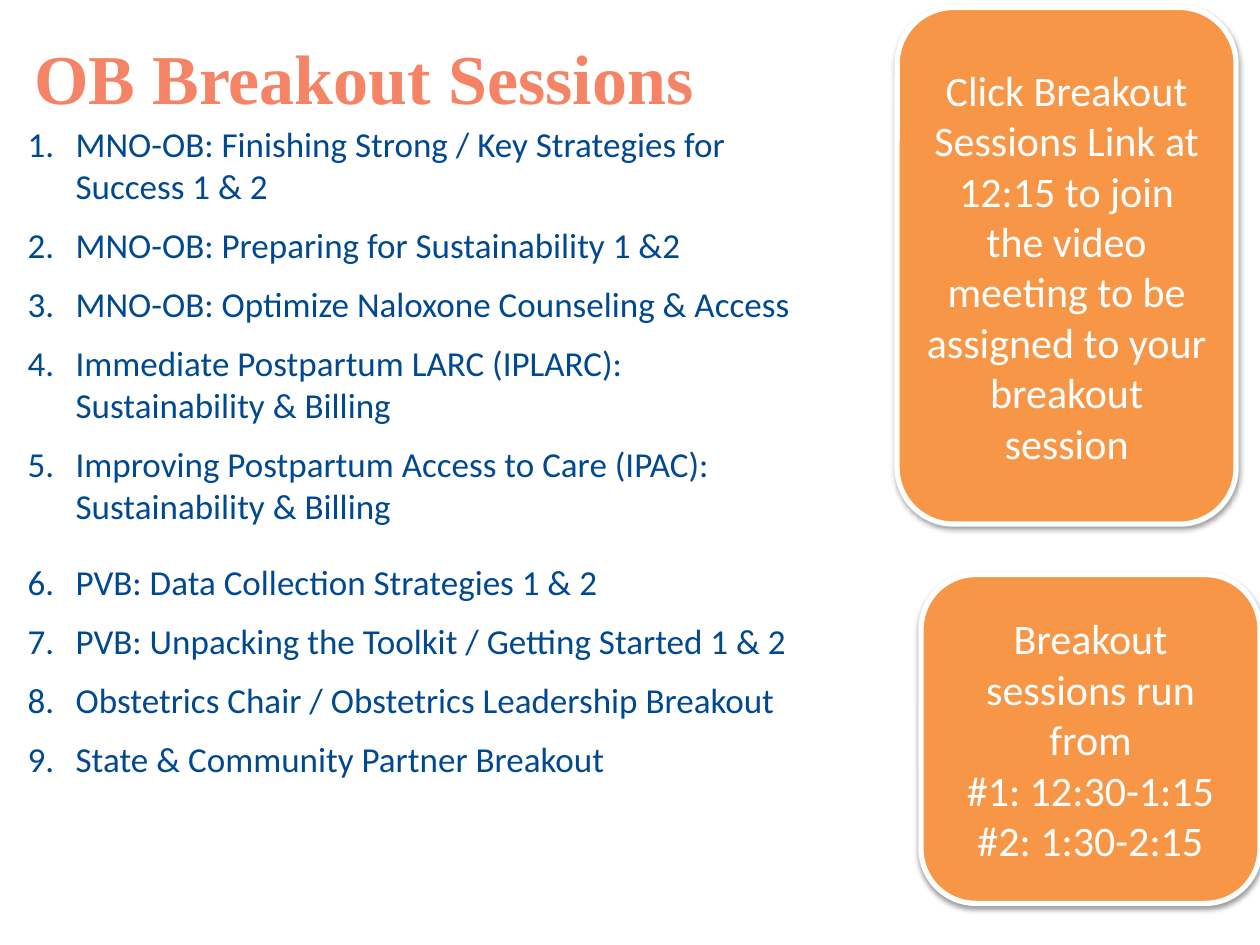
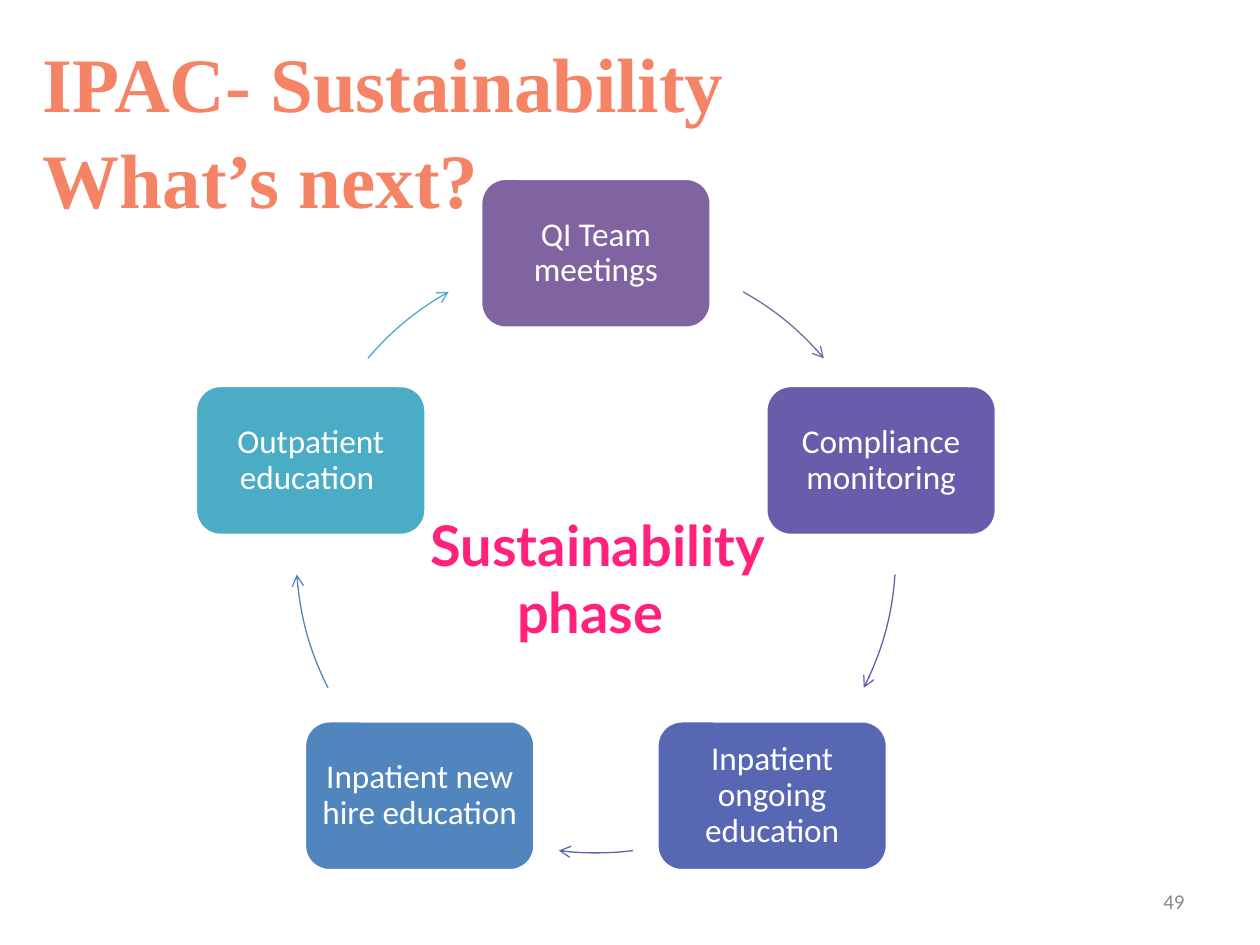
from dataclasses import dataclass
from math import cos, radians, sin

from lxml.etree import SubElement
from pptx import Presentation
from pptx.dml.color import RGBColor
from pptx.enum.shapes import MSO_SHAPE
from pptx.enum.text import MSO_ANCHOR, MSO_AUTO_SIZE, PP_ALIGN
from pptx.oxml.ns import qn
from pptx.util import Emu, Inches, Pt


@dataclass(frozen=True)
class Theme:
    title_font: str = "Times New Roman"
    body_font: str = "Calibri"
    accent_font: str = "Lato"
    coral: str = "F58466"
    navy: str = "004990"
    orange: str = "F79646"
    pink: str = "FF217B"
    grey: str = "898989"
    white: str = "FFFFFF"
    list_size: int = 20
    card_size: int = 24
    step_size: int = 19
    phase_size: int = 32
    number_size: int = 12


THEME = Theme()

SESSIONS = [
    "MNO-OB: Finishing Strong / Key Strategies for Success 1 & 2",
    "MNO-OB: Preparing for Sustainability 1 &2",
    "MNO-OB: Optimize Naloxone Counseling & Access",
    "Immediate Postpartum LARC (IPLARC): Sustainability & Billing",
    "Improving Postpartum Access to Care (IPAC): Sustainability & Billing",
    "PVB: Data Collection Strategies 1 & 2",
    "PVB: Unpacking the Toolkit / Getting Started 1 & 2",
    "Obstetrics Chair / Obstetrics Leadership Breakout",
    "State & Community Partner Breakout",
]
FIRST_PVB_SESSION = 5

# Step, colour, and the arc to the next step in degrees clockwise from the top
CYCLE = [
    ("QI Team meetings", "8064A2", (29.4, 49.5)),
    ("Compliance monitoring", "685DAB", (94.1, 116.7)),
    ("Inpatient ongoing education", "5767B4", (172.9, 187.1)),
    ("Inpatient new hire education", "5185BD", (243.3, 265.9)),
    ("Outpatient education ", "4BACC6", (310.5, 330.6)),
]
CENTER_X, CENTER_Y, RADIUS = 4.73, 4.39, 2.38
STEP_WIDTH, STEP_HEIGHT = 1.83, 1.19


def box(left, top, width, height):
    return [Inches(length) for length in (left, top, width, height)]


def place(shape, left, top, width, height):
    shape.left, shape.top, shape.width, shape.height = box(left, top, width, height)


def write(frame, text, size, color, font=THEME.body_font, bold=False,
          align=PP_ALIGN.LEFT, anchor=MSO_ANCHOR.TOP):
    """Fill a text frame, one paragraph per line, in a single style."""
    frame.text = text
    frame.word_wrap = True
    frame.auto_size = MSO_AUTO_SIZE.NONE
    frame.vertical_anchor = anchor
    for paragraph in frame.paragraphs:
        paragraph.alignment = align
        for run in paragraph.runs:
            run.font.name = font
            run.font.size = Pt(size)
            run.font.bold = bold
            run.font.color.rgb = RGBColor.from_string(color)


def set_title(slide, text, size, left, width):
    title = slide.shapes.title
    place(title, left, 0.17, width, 1.25)
    write(title.text_frame, text, size, THEME.coral, THEME.title_font, bold=True)
    title.text_frame.margin_top = Inches(0.08)
    for paragraph in title.text_frame.paragraphs:
        paragraph.line_spacing = 1.04


def add_label(slide, bounds, text, size, color, **style):
    label = slide.shapes.add_textbox(*box(*bounds))
    write(label.text_frame, text, size, color, **style)


def add_rounded_box(slide, bounds, text, size, fill, line_width):
    rounded = slide.shapes.add_shape(MSO_SHAPE.ROUNDED_RECTANGLE, *box(*bounds))
    rounded.shadow.inherit = False
    rounded.fill.solid()
    rounded.fill.fore_color.rgb = RGBColor.from_string(fill)
    rounded.line.color.rgb = RGBColor.from_string(THEME.white)
    rounded.line.width = Pt(line_width)
    write(rounded.text_frame, text, size, THEME.white,
          align=PP_ALIGN.CENTER, anchor=MSO_ANCHOR.MIDDLE)
    return rounded


def add_notice(slide, bounds, text):
    """Orange card with a soft shadow below it."""
    notice = add_rounded_box(slide, bounds, text, THEME.card_size, THEME.orange, 3)
    effects = notice.element.spPr.find(qn("a:effectLst"))
    shadow = SubElement(effects, qn("a:outerShdw"), blurRad=str(Pt(3.1)),
                        dist=str(Pt(1.6)), dir="5400000", rotWithShape="0")
    black = SubElement(shadow, qn("a:srgbClr"), val="000000")
    SubElement(black, qn("a:alpha"), val="38000")


def add_session_list(slide):
    sessions = slide.placeholders[1]
    place(sessions, 0.12, 0.92, 6.46, 5.69)
    frame = sessions.text_frame
    frame.text = "\n".join(SESSIONS)
    for index, paragraph in enumerate(frame.paragraphs):
        properties = paragraph._p.get_or_add_pPr()
        properties.set("marL", str(Inches(0.38)))
        properties.set("indent", str(Inches(-0.38)))
        SubElement(properties, qn("a:buFont"), typeface="+mj-lt")
        SubElement(properties, qn("a:buAutoNum"), type="arabicPeriod")
        if index == 0:
            gap = 0
        else:
            gap = 19.4 if index == FIRST_PVB_SESSION else 9.7
        paragraph.space_before = Pt(gap)
    restyle = [run for paragraph in frame.paragraphs for run in paragraph.runs]
    for run in restyle:
        run.font.name = THEME.body_font
        run.font.size = Pt(THEME.list_size)
        run.font.color.rgb = RGBColor.from_string(THEME.navy)
    frame.word_wrap = True
    frame.auto_size = MSO_AUTO_SIZE.NONE
    frame.vertical_anchor = MSO_ANCHOR.TOP


def add_cycle_step(slide, text, color, angle):
    left = CENTER_X + RADIUS * sin(radians(angle)) - STEP_WIDTH / 2
    top = CENTER_Y - RADIUS * cos(radians(angle)) - STEP_HEIGHT / 2
    step = add_rounded_box(slide, (left, top, STEP_WIDTH, STEP_HEIGHT),
                           text, THEME.step_size, color, 2)
    frame = step.text_frame
    frame.margin_left = frame.margin_right = Inches(0.08)
    frame.margin_top = frame.margin_bottom = Inches(0.08)
    frame.paragraphs[0].line_spacing = 0.9


def add_cycle_arrow(slide, color, span):
    """Arc on the cycle's circle with an open arrowhead at its end."""
    circle = (CENTER_X - RADIUS, CENTER_Y - RADIUS, 2 * RADIUS, 2 * RADIUS)
    arrow = slide.shapes.add_shape(MSO_SHAPE.ARC, *box(*circle))
    for index, angle in enumerate(span):
        # Arc angles run from three o'clock in 60000ths of a degree
        arrow.adjustments[index] = (angle - 90) % 360 * 0.6
    arrow.shadow.inherit = False
    arrow.fill.background()
    arrow.line.color.rgb = RGBColor.from_string(color)
    arrow.line.width = Pt(0.75)
    SubElement(arrow.line._get_or_add_ln(), qn("a:tailEnd"), type="arrow")


def build_sessions_slide(prs):
    slide = prs.slides.add_slide(prs.slide_layouts.get_by_name("Title and Content"))
    add_session_list(slide)
    set_title(slide, "OB Breakout Sessions", 40, 0.17, 7.75)
    add_notice(slide, (7.12, 0.06, 2.69, 4.1),
               "Click Breakout Sessions Link at 12:15 to join the video meeting "
               "to be assigned to your breakout session")
    add_notice(slide, (7.31, 4.56, 2.69, 2.61),
               "Breakout sessions run from\n#1: 12:30-1:15\n#2: 1:30-2:15")


def build_cycle_slide(prs):
    slide = prs.slides.add_slide(prs.slide_layouts.get_by_name("Title Only"))
    set_title(slide, "IPAC- Sustainability\nWhat’s next?", 44, 0.24, 9)
    add_label(slide, (7.17, 6.95, 2.33, 0.4), "49", THEME.number_size, THEME.grey,
              align=PP_ALIGN.RIGHT, anchor=MSO_ANCHOR.MIDDLE)
    for index, (text, color, span) in enumerate(CYCLE):
        add_cycle_step(slide, text, color, index * 360 / len(CYCLE))
        add_cycle_arrow(slide, color, span)
    add_label(slide, (3.26, 4, 2.96, 1.18), "Sustainability phase ",
              THEME.phase_size, THEME.pink, font=THEME.accent_font, bold=True,
              align=PP_ALIGN.CENTER)


def main():
    prs = Presentation()
    prs.slide_width, prs.slide_height = Inches(10), Inches(7.5)
    build_sessions_slide(prs)
    build_cycle_slide(prs)
    prs.save("out.pptx")


if __name__ == "__main__":
    main()
